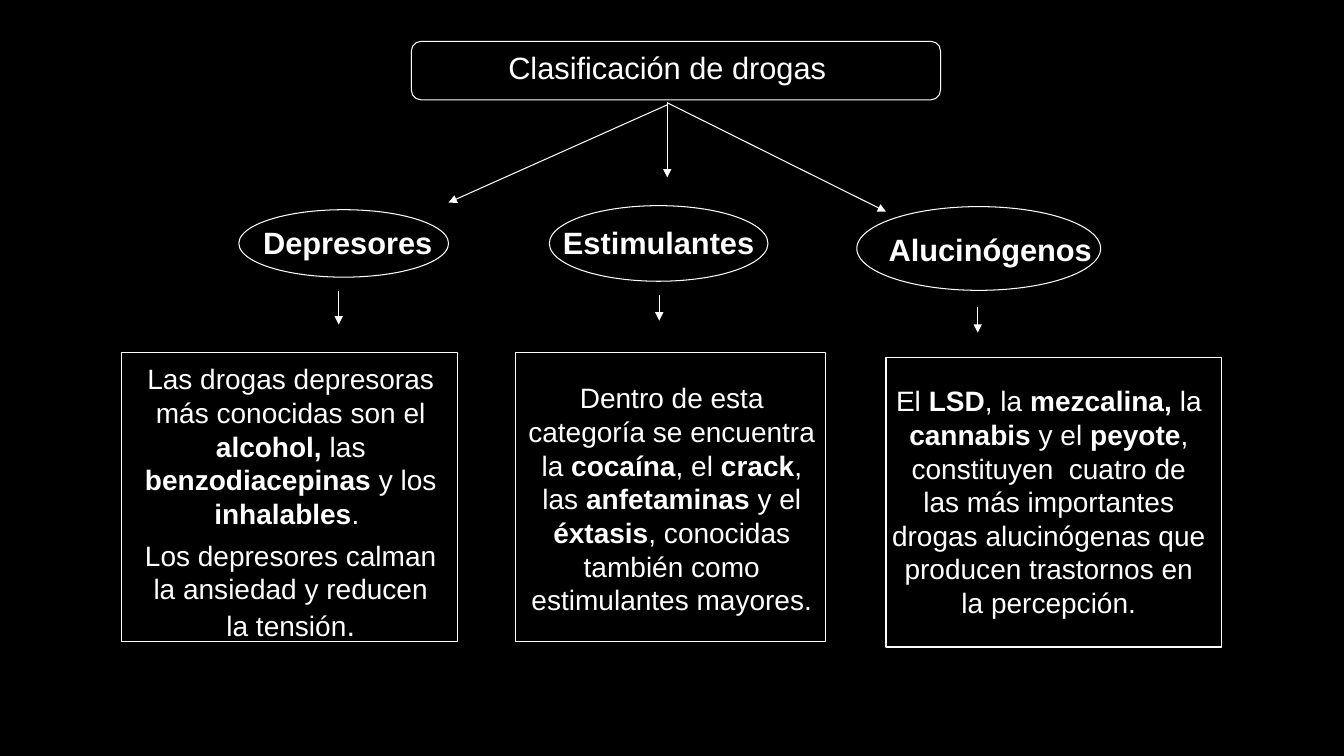
from lxml import etree
from pptx import Presentation
from pptx.dml.color import RGBColor
from pptx.enum.shapes import MSO_CONNECTOR, MSO_SHAPE
from pptx.enum.text import PP_ALIGN
from pptx.oxml.ns import qn
from pptx.util import Pt

ROUND, OVAL, RECT = MSO_SHAPE.ROUNDED_RECTANGLE, MSO_SHAPE.OVAL, MSO_SHAPE.RECTANGLE
LINE = MSO_CONNECTOR.STRAIGHT
CENTER = PP_ALIGN.CENTER

COLORS = {"back": "000000", "ink": "FFFFFF"}
FONT = "Arial"
HEAD, BODY = 22, 20

# Boxes are (left, top, width, height) in points; *stars* mark bold text.
TITLE = {
    "text": "Clasificación de drogas",
    "frame": (293.8, 29.5, 378, 41.8),
    "label": (298.8, 31, 355.7, 33.8),
}
GROUPS = [
    {
        "name": "Depresores",
        "label": (137.5, 156.2, 221.8, 33.8),
        "oval": (170.6, 149.8, 149.8, 48.2),
        "branch": (476.6, 74.9, 320.4, 144.7),
        "arrow": (241.9, 208.1, 241.9, 231.8),
        "frame": (87.1, 252, 239.8, 206.6),
        "area": (93.6, 254.9, 228.2, 252.7),
        "paras": [
            "Las drogas depresoras más conocidas son el *alcohol, *las "
            "*benzodiacepinas* y los *inhalables*. ",
            "Los depresores calman la ansiedad y reducen la tensión",
        ],
        "stop": ".",
    },
    {
        "name": "Estimulantes",
        "label": (386.6, 156.2, 167.8, 33.8),
        "oval": (392.4, 146.9, 156.2, 54),
        "branch": (476.6, 72.7, 476.6, 126.7),
        "arrow": (470.9, 211, 470.9, 229),
        "frame": (367.9, 252, 221.8, 206.6),
        "area": (365.8, 268.6, 228.2, 203.8),
        "paras": [
            "Dentro de esta categoría se encuentra la *cocaína*, el *crack*, "
            "las *anfetaminas* y el *éxtasis*, conocidas también como "
            "estimulantes mayores.",
        ],
    },
    {
        "name": "Alucinógenos",
        "label": (605.5, 161.3, 203.8, 33.8),
        "oval": (612, 147.6, 174.2, 59.8),
        "branch": (476.6, 73.4, 632.9, 151.2),
        "arrow": (698.4, 219.6, 698.4, 237.6),
        "frame": (632.9, 255.6, 239.8, 206.6),
        "area": (629.3, 270.7, 239.8, 177.1),
        "paras": [
            "El *LSD*, la *mezcalina, *la *cannabis* y el *peyote*, "
            "constituyen  cuatro de las más importantes drogas alucinógenas "
            "que producen trastornos en la percepción.",
        ],
    },
]


def tint(name):
    return RGBColor.from_string(COLORS[name])


def points(box):
    return [Pt(n) for n in box]


def add_frame(slide, kind, box):
    shape = slide.shapes.add_shape(kind, *points(box))
    shape.shadow.inherit = False
    shape.fill.background()
    shape.line.color.rgb = tint("ink")
    shape.line.width = Pt(0.75)


def add_arrow(slide, ends):
    arrow = slide.shapes.add_connector(LINE, *points(ends))
    arrow.line.color.rgb = tint("ink")
    arrow.line.width = Pt(0.75)
    tip = etree.SubElement(arrow.line._get_or_add_ln(), qn("a:tailEnd"))
    tip.set("type", "triangle")
    etree.SubElement(arrow._element.spPr, qn("a:effectLst"))


def add_text(slide, box, paras, size, bold=False, stop=""):
    """Write centred paragraphs; stop is a larger mark that ends the last one."""
    frame = slide.shapes.add_textbox(*points(box)).text_frame
    frame.word_wrap = True
    for i, text in enumerate(paras):
        para = frame.add_paragraph() if i else frame.paragraphs[0]
        para.alignment = CENTER
        if i:
            para.space_before = Pt(3)
        if len(paras) > 1:
            para.space_after = Pt(3)
        para.font.name = FONT
        para.font.size = Pt(size)
        para.font.bold = bold
        para.font.color.rgb = tint("ink")
        for j, part in enumerate(text.split("*")):
            run = para.add_run()
            run.text = part
            if j % 2:
                run.font.bold = True
    if stop:
        run = para.add_run()
        run.text = stop
        run.font.size = Pt(HEAD)


def main():
    deck = Presentation()
    deck.slide_width, deck.slide_height = Pt(960), Pt(540)
    slide = deck.slides.add_slide(deck.slide_layouts[6])
    fill = slide.background.fill
    fill.solid()
    fill.fore_color.rgb = tint("back")

    add_frame(slide, ROUND, TITLE["frame"])
    add_text(slide, TITLE["label"], [TITLE["text"]], HEAD)
    for group in GROUPS:
        add_arrow(slide, group["branch"])
        add_frame(slide, OVAL, group["oval"])
        add_text(slide, group["label"], [group["name"]], HEAD, bold=True)
        add_arrow(slide, group["arrow"])
        add_frame(slide, RECT, group["frame"])
        add_text(slide, group["area"], group["paras"], BODY,
                 stop=group.get("stop", ""))
    deck.save("out.pptx")


if __name__ == "__main__":
    main()
